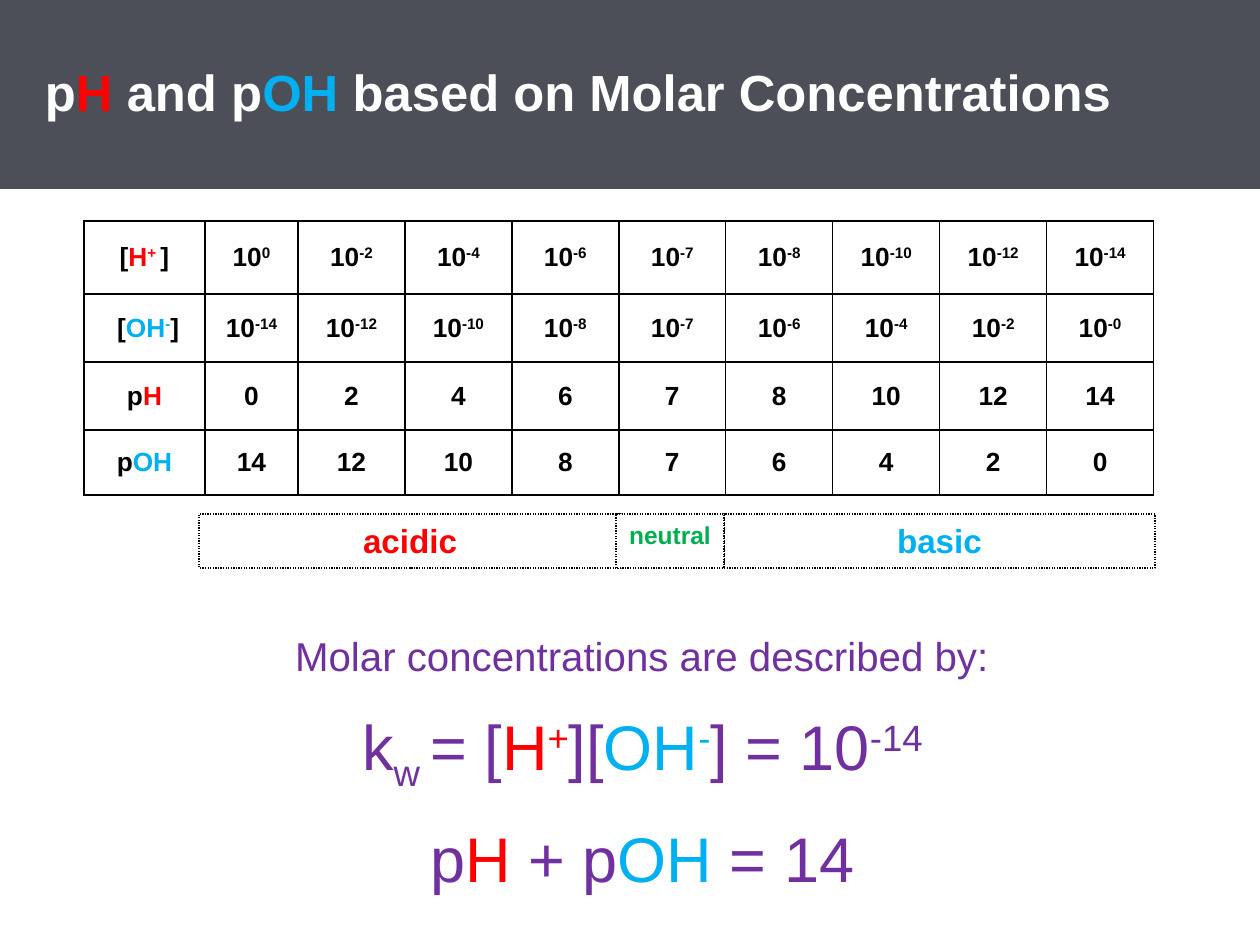
from lxml.etree import SubElement
from pptx import Presentation
from pptx.dml.color import RGBColor
from pptx.enum.dml import MSO_LINE as Dash
from pptx.enum.shapes import MSO_SHAPE as Shape
from pptx.enum.text import MSO_ANCHOR as Anchor, PP_ALIGN as Align
from pptx.oxml.ns import qn
from pptx.util import Emu, Pt

SCALE = 914400 / 126
BLACK, WHITE, SLATE = "000000", "FFFFFF", "4D4F58"
RED, BLUE, GREEN, PURPLE = "FF0000", "00B0F0", "00B050", "7030A0"
SUB, SUPER = -25000, 30000


def px(n):
    return Emu(round(n * SCALE))


def color(code):
    return RGBColor.from_string(code)


def add_runs(para, runs, size, ink, bold=False):
    """Add runs given as (text, colour or None for ink, baseline shift)."""
    for text, tint, shift in runs:
        run = para.add_run()
        run.text = text
        font = run.font
        font.name, font.size, font.bold = "Arial", Pt(size), bold
        font.color.rgb = color(tint or ink)
        if shift:
            font._element.set("baseline", str(shift))


def plain(text, tint=None):
    return (text, tint, 0)


def raised(text, tint=None):
    return (text, tint, SUPER)


def set_insets(frame, left, top, right, bottom):
    frame.margin_left, frame.margin_top = px(left), px(top)
    frame.margin_right, frame.margin_bottom = px(right), px(bottom)


def add_rect(slide, box, fill):
    rect = slide.shapes.add_shape(Shape.RECTANGLE, *map(px, box))
    rect.shadow.inherit = False
    rect.fill.solid()
    rect.fill.fore_color.rgb = color(fill)
    rect.line.fill.background()
    rect.text_frame.word_wrap = True
    return rect


def add_title(slide):
    rect = add_rect(slide, (0, 0, 1260, 189), SLATE)
    frame = rect.text_frame
    set_insets(frame, 45, 19, 45, 19)
    frame.vertical_anchor = Anchor.MIDDLE
    para = frame.paragraphs[0]
    para.alignment, para.line_spacing = Align.LEFT, 0.95
    runs = [plain("p"), plain("H", RED), plain(" and p"), plain("OH ", BLUE),
            plain("based on Molar Concentrations")]
    add_runs(para, runs, 29, WHITE, True)


def add_zone(slide, left, width, text, size, ink):
    rect = add_rect(slide, (left, 514, width, 54), WHITE)
    rect.line.color.rgb = color(BLACK)
    rect.line.width = Pt(0.75)
    rect.line.dash_style = Dash.ROUND_DOT
    frame = rect.text_frame
    set_insets(frame, 13, 6, 13, 6)
    frame.vertical_anchor = Anchor.TOP
    para = frame.paragraphs[0]
    para.alignment = Align.CENTER
    add_runs(para, [plain(text)], size, ink, True)


def add_borders(cell):
    props = cell._tc.get_or_add_tcPr()
    for i, side in enumerate(("lnL", "lnR", "lnT", "lnB")):
        line = props.makeelement(qn("a:" + side), {"w": str(Pt(1))})
        fill = SubElement(line, qn("a:solidFill"))
        SubElement(fill, qn("a:srgbClr"), val=BLACK)
        props.insert(i, line)


def fill_cell(cell, runs):
    cell.fill.background()
    add_borders(cell)
    set_insets(cell, 9, 0, 9, 0)
    cell.vertical_anchor = Anchor.MIDDLE
    para = cell.text_frame.paragraphs[0]
    para.alignment = Align.CENTER
    add_runs(para, runs, 15, BLACK, True)


def power(exp):
    return [plain("10"), raised(exp)]


def add_grid(slide):
    ph = [0, 2, 4, 6, 7, 8, 10, 12, 14]
    poh = ph[::-1]
    rows = [
        [[plain("["), plain("H", RED), raised("+ ", RED), plain("]")]]
        + [power(f"-{n}" if n else "0") for n in ph],
        [[plain(" ["), plain("OH", BLUE), raised("-", BLUE), plain("]")]]
        + [power(f"-{n}") for n in poh],
        [[plain("p"), plain("H", RED)]] + [[plain(str(n))] for n in ph],
        [[plain("p"), plain("OH", BLUE)]] + [[plain(str(n))] for n in poh],
    ]
    widths, heights = [121, 93] + [107] * 8, [73, 68, 68, 65]
    box = (84, 221, sum(widths), sum(heights))
    table = slide.shapes.add_table(4, 10, *map(px, box)).table
    table.first_row = table.horz_banding = False
    for col, width in zip(table.columns, widths):
        col.width = px(width)
    for row, height, items in zip(table.rows, heights, rows):
        row.height = px(height)
        for cell, runs in zip(row.cells, items):
            fill_cell(cell, runs)


def add_rules(slide):
    """Add the sentence and the two formulas below the table."""
    lines = [
        (23, [plain("Molar concentrations are described by:")]),
        (36, [plain("k"), ("w ", None, SUB), plain("= ["), plain("H", RED),
              raised("+", RED), plain("]["), plain("OH", BLUE),
              raised("-", BLUE), plain("] = 10"), raised("-14")]),
        (36, [plain("p"), plain("H", RED), plain(" + p"), plain("OH", BLUE),
              plain(" = 14")]),
    ]
    frame = slide.shapes.add_textbox(*map(px, (0, 609, 1260, 336))).text_frame
    frame.word_wrap = True
    set_insets(frame, 25, 13, 0, 26)
    for i, (size, runs) in enumerate(lines):
        para = frame.add_paragraph() if i else frame.paragraphs[0]
        para.alignment, para.line_spacing = Align.CENTER, 1.2
        para.space_before = Pt(6 if i else 0)
        add_runs(para, runs, size, PURPLE)


def main():
    deck = Presentation()
    deck.slide_width, deck.slide_height = px(1260), px(945)
    slide = deck.slides.add_slide(deck.slide_layouts[6])
    add_rules(slide)
    add_title(slide)
    add_grid(slide)
    add_zone(slide, 724, 431, "basic", 19, BLUE)
    add_zone(slide, 199, 422, "acidic", 19, RED)
    add_zone(slide, 616, 108, "neutral", 14, GREEN)
    deck.save("out.pptx")


if __name__ == "__main__":
    main()
